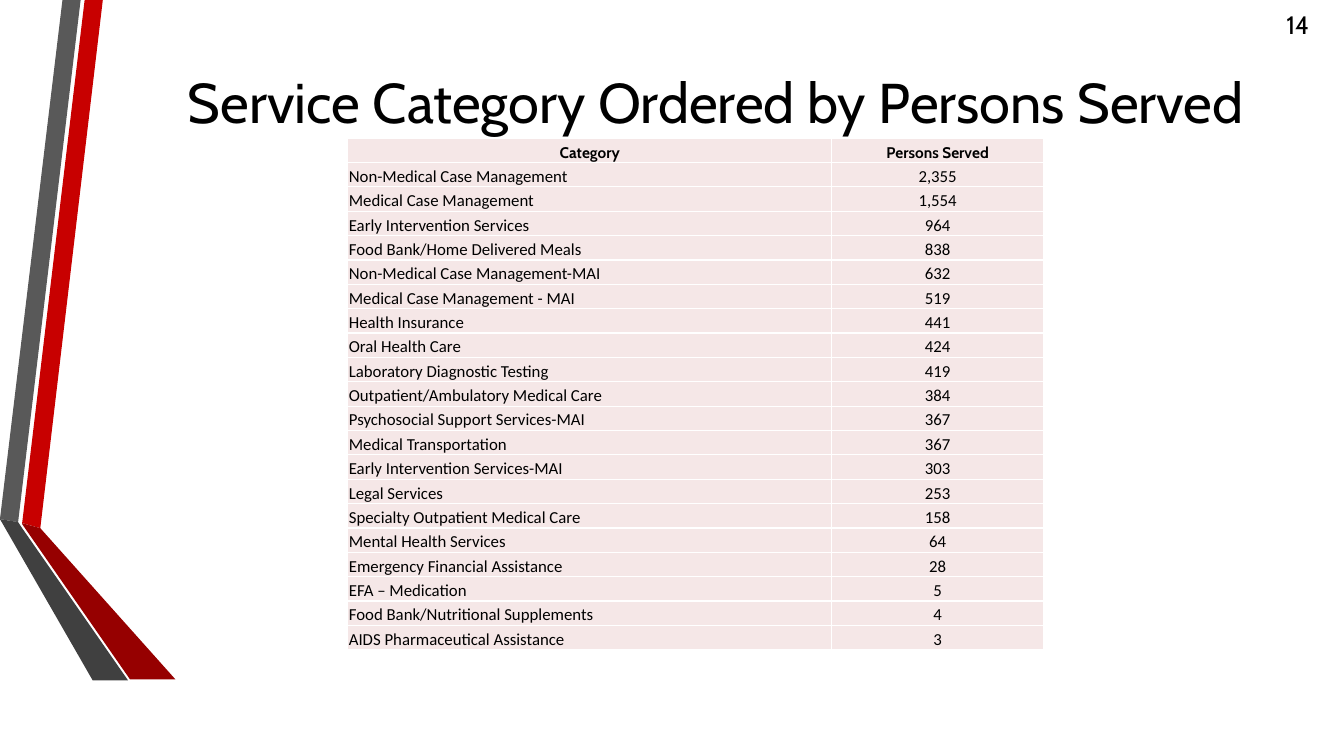
from lxml.etree import SubElement
from pptx import Presentation
from pptx.dml.color import RGBColor
from pptx.enum.text import MSO_ANCHOR, PP_ALIGN
from pptx.oxml.ns import qn
from pptx.util import Pt

PX = 9144  # EMU per px, 100 px to the inch

BLACK = RGBColor(0x00, 0x00, 0x00)
WHITE = RGBColor(0xFF, 0xFF, 0xFF)
RED = RGBColor(0xC8, 0x00, 0x00)
DARK_RED = RGBColor(0x96, 0x00, 0x00)
GREY = RGBColor(0x59, 0x59, 0x59)
DARK_GREY = RGBColor(0x40, 0x40, 0x40)
PINK = RGBColor(0xF5, 0xE7, 0xE7)

HEADING_FONT = "Cabin"
BODY_FONT = "Calibri"

RIBBONS = [
    (RED, [(22, 519), (40, 524), (102, 0), (84, 0)]),
    (GREY, [(80, 0), (62, 0), (0, 515), (18, 518)]),
    (DARK_RED, [(22, 520), (129, 674), (174, 674), (40, 524), (22, 519)]),
    (DARK_GREY, [(127, 675), (22, 524), (18, 518), (0, 515), (92, 675)]),
]

HEADINGS = ("Category", "Persons Served")
SERVICES = [
    ("Non-Medical Case Management", "2,355"),
    ("Medical Case Management", "1,554"),
    ("Early Intervention Services", "964"),
    ("Food Bank/Home Delivered Meals", "838"),
    ("Non-Medical Case Management-MAI", "632"),
    ("Medical Case Management - MAI", "519"),
    ("Health Insurance", "441"),
    ("Oral Health Care", "424"),
    ("Laboratory Diagnostic Testing", "419"),
    ("Outpatient/Ambulatory Medical Care", "384"),
    ("Psychosocial Support Services-MAI", "367"),
    ("Medical Transportation", "367"),
    ("Early Intervention Services-MAI", "303"),
    ("Legal Services", "253"),
    ("Specialty Outpatient Medical Care", "158"),
    ("Mental Health Services", "64"),
    ("Emergency Financial Assistance", "28"),
    ("EFA – Medication", "5"),
    ("Food Bank/Nutritional Supplements", "4"),
    ("AIDS Pharmaceutical Assistance", "3"),
]


def emu(box):
    return [length * PX for length in box]


def style(paragraph, font_name, size, align, bold=False):
    paragraph.alignment = align
    for run in paragraph.runs:
        run.font.name = font_name
        run.font.size = Pt(size)
        run.font.bold = bold
        run.font.color.rgb = BLACK


def add_ribbons(slide, left, top):
    for color, corners in RIBBONS:
        outline = slide.shapes.build_freeform(*corners[0], scale=PX)
        outline.add_line_segments(corners[1:], close=True)
        ribbon = outline.convert_to_shape(left * PX, top * PX)
        ribbon.shadow.inherit = False
        ribbon.fill.solid()
        ribbon.fill.fore_color.rgb = color
        ribbon.line.fill.background()


def add_page_number(slide, box):
    frame = slide.shapes.add_textbox(*emu(box)).text_frame
    frame.word_wrap = True
    frame.text = "14"
    style(frame.paragraphs[0], HEADING_FONT, 18, PP_ALIGN.LEFT)


def set_title(slide, box):
    title = slide.shapes.title
    title.left, title.top, title.width, title.height = emu(box)
    frame = title.text_frame
    frame.text = "Service Category Ordered by Persons Served"
    frame.vertical_anchor = MSO_ANCHOR.MIDDLE
    style(frame.paragraphs[0], HEADING_FONT, 40, PP_ALIGN.CENTER)


def add_borders(cell):
    properties = cell._tc.get_or_add_tcPr()
    for side in ("a:lnL", "a:lnR", "a:lnT", "a:lnB"):
        border = SubElement(properties, qn(side), w=str(Pt(1)))
        fill = SubElement(border, qn("a:solidFill"))
        SubElement(fill, qn("a:srgbClr"), val=str(WHITE))


def format_cell(cell, text, is_heading, align):
    inset = 0 if is_heading else PX
    cell.margin_left = cell.margin_right = cell.margin_top = inset
    cell.margin_bottom = 0
    cell.vertical_anchor = MSO_ANCHOR.BOTTOM
    add_borders(cell)
    cell.fill.solid()
    cell.fill.fore_color.rgb = PINK
    cell.text = text
    font_name, size = (HEADING_FONT, 11) if is_heading else (BODY_FONT, 12)
    style(cell.text_frame.paragraphs[0], font_name, size, align, is_heading)


def add_service_table(slide, box, category_width):
    rows = [HEADINGS] + SERVICES
    left, top, width, height = emu(box)
    table = slide.shapes.add_table(len(rows), 2, left, top, width, height).table
    table.first_row = table.horz_banding = False
    table.columns[0].width = category_width * PX
    table.columns[1].width = width - category_width * PX
    for r, texts in enumerate(rows):
        for c, text in enumerate(texts):
            centred = r == 0 or c == 1
            align = PP_ALIGN.CENTER if centred else PP_ALIGN.LEFT
            format_cell(table.cell(r, c), text, r == 0, align)


def main():
    deck = Presentation()
    deck.slide_width, deck.slide_height = emu((1333, 750))
    slide = deck.slides.add_slide(deck.slide_layouts[5])

    # Side decoration and page number
    add_ribbons(slide, 0, 0)
    add_page_number(slide, (1266, 4, 67, 40))

    # Title and table
    set_title(slide, (162, 4, 1096, 192))
    add_service_table(slide, (345, 137, 690, 508), category_width=480)

    deck.save("out.pptx")


if __name__ == "__main__":
    main()
